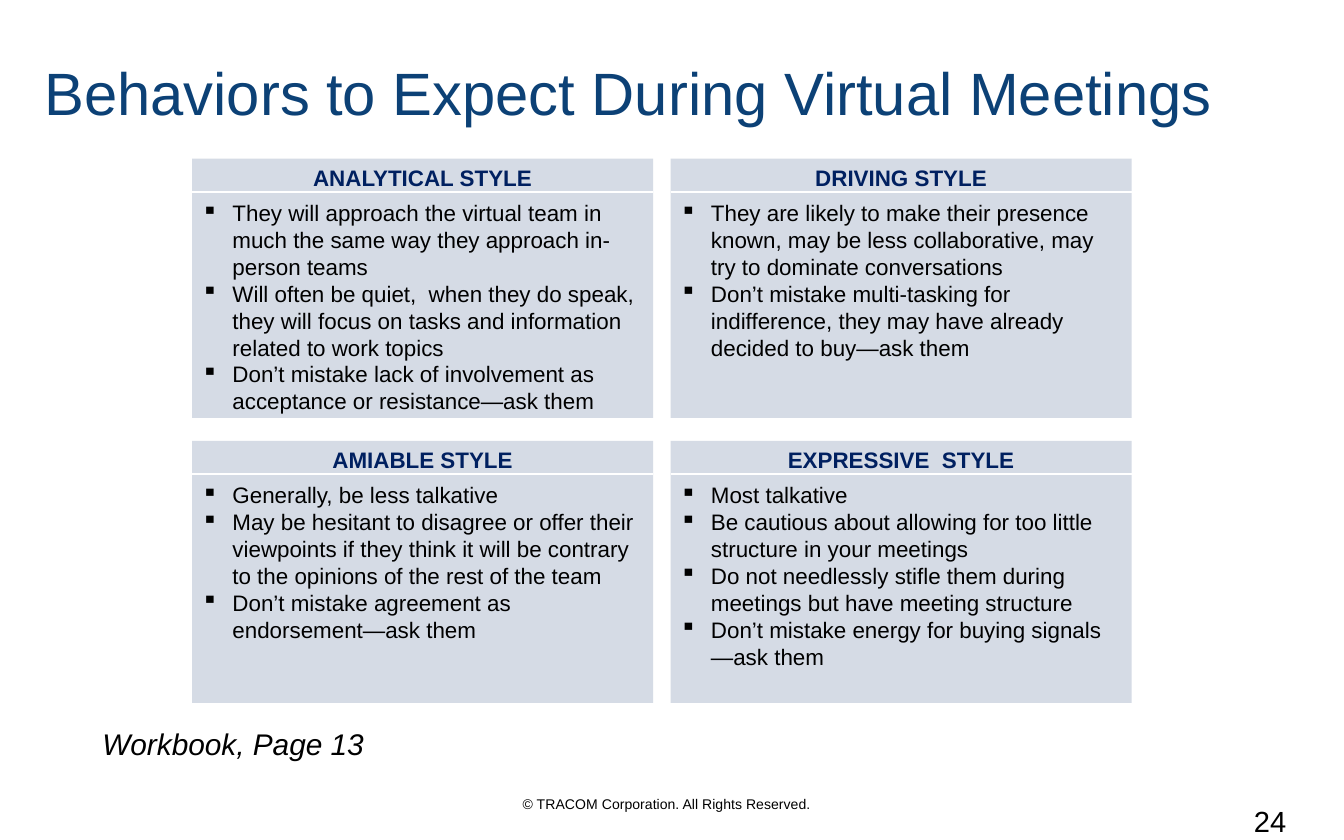
import dataclasses

import lxml.etree
import pptx
import pptx.dml.color
import pptx.enum.shapes
import pptx.enum.text
import pptx.oxml.ns
import pptx.util

EMU_PER_PX = 9144  # 100 px to the inch
ALIGN = pptx.enum.text.PP_ALIGN
ANCHOR = pptx.enum.text.MSO_ANCHOR


@dataclasses.dataclass(frozen=True)
class Theme:
    font: str = "Arial"
    title: str = "0C4176"
    heading: str = "002060"
    text: str = "000000"
    panel: str = "D5DBE5"
    rule: str = "FFFFFF"
    title_size: float = 32
    body_size: float = 12
    reference_size: float = 16
    number_size: float = 15.6
    footer_size: float = 7.5


THEME = Theme()

LEFT, RIGHT = 143, 499
PANEL_WIDTH = 343
HEADING_HEIGHT = 25
# Each row of panels: top and height
ROWS = ((118, 193), (328, 195))

STYLES = (
    (
        ("ANALYTICAL STYLE", (
            "They will approach the virtual team in much the same way they approach in-person teams",
            "Will often be quiet,  when they do speak, they will focus on tasks and information "
            "related to work topics",
            "Don’t mistake lack of involvement as acceptance or resistance—ask them",
        )),
        ("DRIVING STYLE", (
            "They are likely to make their presence known, may be less collaborative, may try to "
            "dominate conversations",
            "Don’t mistake multi-tasking for indifference, they may have already decided to "
            "buy—ask them",
        )),
    ),
    (
        ("AMIABLE STYLE", (
            "Generally, be less talkative",
            "May be hesitant to disagree or offer their viewpoints if they think it will be "
            "contrary to the opinions of the rest of the team",
            "Don’t mistake agreement as endorsement—ask them",
        )),
        ("EXPRESSIVE  STYLE", (
            "Most talkative",
            "Be cautious about allowing for too little structure in your meetings",
            "Do not needlessly stifle them during meetings but have meeting structure",
            "Don’t mistake energy for buying signals—ask them",
        )),
    ),
)


def px(n):
    return pptx.util.Emu(n * EMU_PER_PX)


def rgb(color):
    return pptx.dml.color.RGBColor.from_string(color)


def add_bullet(p, indent=23):
    pPr = p._p.get_or_add_pPr()
    pPr.set("marL", str(px(indent)))
    pPr.set("indent", str(-px(indent)))
    bullet = lxml.etree.SubElement(pPr, pptx.oxml.ns.qn("a:buChar"))
    bullet.set("char", "▪")


def write(p, text, size, color=THEME.text, bold=False, italic=False,
          align=ALIGN.LEFT, after=0, bullet=False):
    """Fill one paragraph with formatted text."""
    if bullet:
        add_bullet(p)
    p.alignment = align
    p.space_before = pptx.util.Pt(0)
    p.space_after = pptx.util.Pt(after)
    r = p.add_run()
    r.text = text
    r.font.name = THEME.font
    r.font.size = pptx.util.Pt(size)
    r.font.bold = bold
    r.font.italic = italic
    r.font.color.rgb = rgb(color)


def set_frame(tf, anchor=ANCHOR.TOP, margin_x=10, margin_y=5):
    tf.word_wrap = True
    tf.auto_size = pptx.enum.text.MSO_AUTO_SIZE.NONE
    tf.vertical_anchor = anchor
    tf.margin_left = tf.margin_right = px(margin_x)
    tf.margin_top = tf.margin_bottom = px(margin_y)


def add_title(s, text):
    sp = s.shapes.title
    sp.left, sp.top, sp.width, sp.height = px(23), px(32), px(895), px(72)
    set_frame(sp.text_frame, ANCHOR.MIDDLE)
    write(sp.text_frame.paragraphs[0], text, THEME.title_size, color=THEME.title)


def add_label(s, text, box, size, **fmt):
    sp = s.shapes.add_textbox(*map(px, box))
    set_frame(sp.text_frame)
    write(sp.text_frame.paragraphs[0], text, size, align=ALIGN.CENTER, **fmt)


def add_rule(shapes, x, y, width):
    line = shapes.add_connector(pptx.enum.shapes.MSO_CONNECTOR.STRAIGHT,
                                px(x), px(y), px(x + width), px(y))
    line.line.color.rgb = rgb(THEME.rule)
    line.line.width = pptx.util.Pt(1)
    lxml.etree.SubElement(line._element.spPr, pptx.oxml.ns.qn("a:effectLst"))


def add_panel(s, x, y, height, heading, behaviors):
    """Group a filled panel with the rule under its heading."""
    shapes = s.shapes.add_group_shape().shapes
    sp = shapes.add_shape(pptx.enum.shapes.MSO_SHAPE.RECTANGLE,
                          px(x), px(y), px(PANEL_WIDTH), px(height))
    sp.shadow.inherit = False
    sp.fill.solid()
    sp.fill.fore_color.rgb = rgb(THEME.panel)
    sp.line.fill.background()
    tf = sp.text_frame
    set_frame(tf, margin_x=7, margin_y=4)
    write(tf.paragraphs[0], heading, THEME.body_size, color=THEME.heading,
          bold=True, align=ALIGN.CENTER, after=4.5)
    for behavior in behaviors:
        write(tf.add_paragraph(), behavior, THEME.body_size, bullet=True)
    add_rule(shapes, x, y + HEADING_HEIGHT, PANEL_WIDTH)


def main():
    prs = pptx.Presentation()
    prs.slide_width, prs.slide_height = px(1000), px(625)
    s = prs.slides.add_slide(prs.slide_layouts[5])

    add_title(s, "Behaviors to Expect During Virtual Meetings")
    for (y, height), row in zip(ROWS, STYLES):
        for x, (heading, behaviors) in zip((LEFT, RIGHT), row):
            add_panel(s, x, y, height, heading, behaviors)
    add_label(s, "Workbook, Page 13", (61, 535, 225, 37), THEME.reference_size, italic=True)
    add_label(s, "© TRACOM Corporation. All Rights Reserved.", (326, 587, 340, 23),
              THEME.footer_size)
    add_label(s, "24", (907, 593, 76, 33), THEME.number_size)

    prs.save("out.pptx")


if __name__ == "__main__":
    main()
